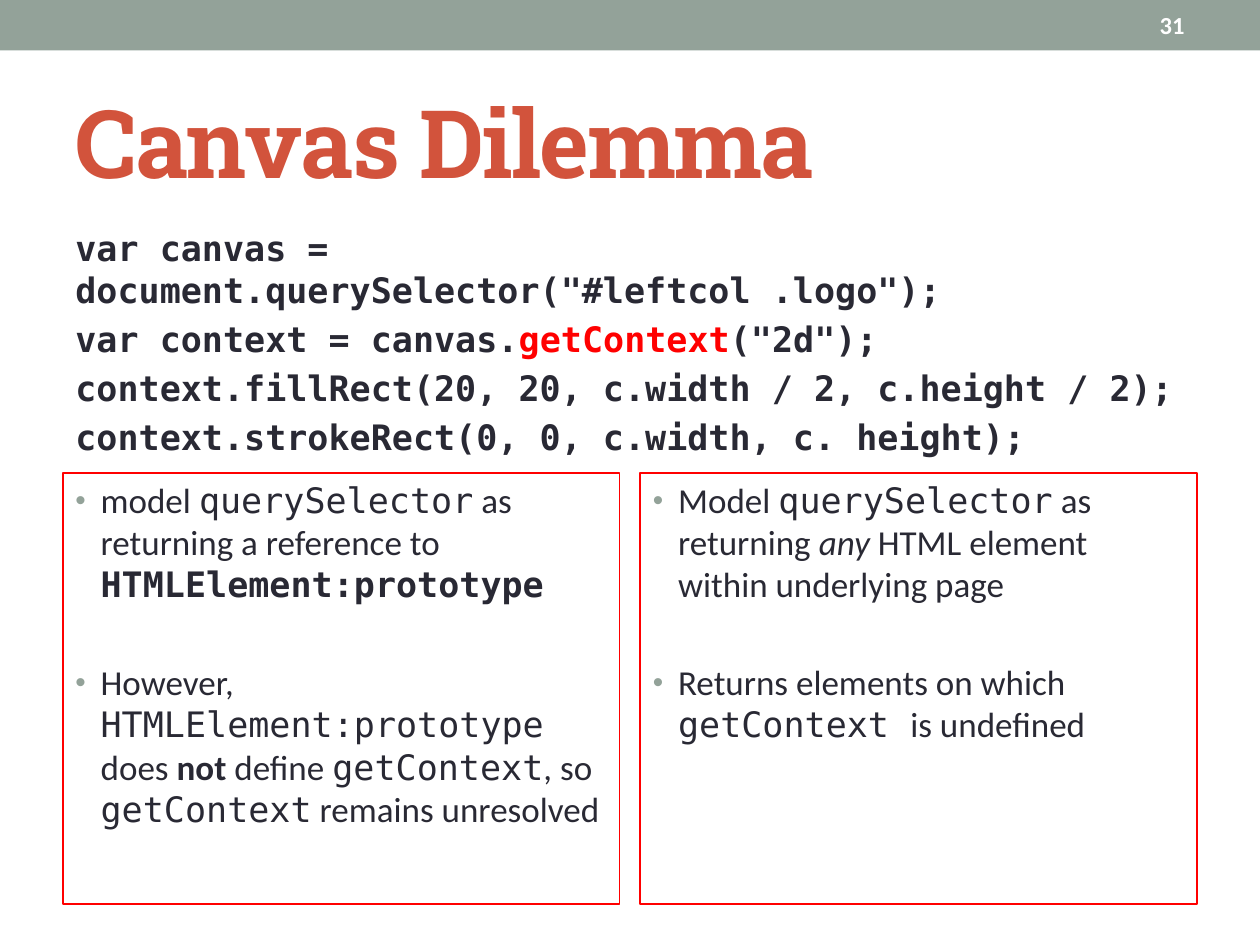
from lxml.etree import SubElement
from pptx import Presentation
from pptx.dml.color import RGBColor
from pptx.enum.shapes import MSO_SHAPE
from pptx.enum.text import MSO_ANCHOR, MSO_AUTO_SIZE, PP_ALIGN
from pptx.oxml.ns import qn
from pptx.util import Cm, Pt

COLORS = {"sage": "93A299", "rust": "D2533C", "ink": "292934", "red": "FF0000", "white": "FFFFFF"}
BODY_FONT, CODE_FONT, TITLE_FONT = "Calibri", "DejaVu Sans Mono", "Roboto Slab"
MARGIN, CONTENT_WIDTH = 1.27, 22.86
CARD_TOP, CARD_WIDTH, CARD_HEIGHT = 9.53, 11.22, 8.69

CODE_LINES = [
    [('var canvas = document.querySelector("#leftcol .logo");', "code bold")],
    [("var context = canvas.", "code bold"), ("getContext", "code bold red"), ('("2d");', "code bold")],
    [("context.fillRect(20, 20, c.width / 2, c.height / 2);", "code bold")],
    [("context.strokeRect(0, 0, c.width, c. height);", "code bold")],
]
CARDS = [
    [
        [("model ", ""), ("querySelector", "code"), (" as returning a reference to ", ""),
         ("HTMLElement:prototype", "code bold")],
        [("However, ", ""), ("HTMLElement:prototype", "code"), (" does ", ""), ("not", "bold"),
         (" deﬁne ", ""), ("getContext", "code"), (", so ", ""), ("getContext", "code"),
         (" remains unresolved", "")],
    ],
    [
        [("Model ", ""), ("querySelector", "code"), (" as returning ", ""), ("any", "italic"),
         (" HTML element within underlying page", "")],
        [("Returns elements on which ", ""), ("getContext ", "code"), ("is undeﬁned", "")],
    ],
]


def rgb(name):
    """Return the named palette colour."""
    return RGBColor.from_string(COLORS[name])


def style_span(span, font, size, color, bold=False, italic=False):
    """Format one run of text."""
    span.font.name = font
    span.font.size = Pt(size)
    span.font.color.rgb = rgb(color)
    span.font.bold = bold
    span.font.italic = italic


def add_box(slide, left, top, width, height):
    """Add a wrapping text box, measured in centimetres."""
    box = slide.shapes.add_textbox(Cm(left), Cm(top), Cm(width), Cm(height))
    box.text_frame.word_wrap = True
    return box


def add_rectangle(slide, left, top, width, height):
    """Add a rectangle without shadow, measured in centimetres."""
    shape = slide.shapes.add_shape(MSO_SHAPE.RECTANGLE, Cm(left), Cm(top), Cm(width), Cm(height))
    shape.shadow.inherit = False
    return shape


def add_bullet(para):
    """Give a paragraph a hanging sage bullet."""
    properties = para._p.get_or_add_pPr()
    properties.set("marL", str(Cm(0.51)))
    properties.set("indent", str(-Cm(0.51)))
    color = SubElement(properties, qn("a:buClr"))
    SubElement(color, qn("a:srgbClr"), val=COLORS["sage"])
    SubElement(properties, qn("a:buSzPct"), val="85000")
    SubElement(properties, qn("a:buFont"), typeface="Arial")
    SubElement(properties, qn("a:buChar"), char="•")


def fill_text(frame, lines, gap=4, bulleted=False):
    """Write styled paragraphs with a gap between them."""
    for index, line in enumerate(lines):
        para = frame.paragraphs[0] if index == 0 else frame.add_paragraph()
        para.alignment = PP_ALIGN.LEFT
        para.space_before = Pt(gap if index else 4)
        if bulleted:
            add_bullet(para)
        for text, style in line:
            span = para.add_run()
            span.text = text
            style_span(span, CODE_FONT if "code" in style else BODY_FONT, 20,
                       "red" if "red" in style else "ink", "bold" in style, "italic" in style)


def add_header(slide, number):
    """Add the top band and the page number."""
    band = add_rectangle(slide, 0, 0, 25.4, 1.02)
    band.fill.solid()
    band.fill.fore_color.rgb = rgb("sage")
    band.line.fill.background()
    box = add_box(slide, 21.16, 0.05, 2.97, 0.91)
    box.text_frame.vertical_anchor = MSO_ANCHOR.MIDDLE
    para = box.text_frame.paragraphs[0]
    para.text = number
    para.alignment = PP_ALIGN.RIGHT
    style_span(para.runs[0], BODY_FONT, 14, "white", bold=True)


def set_title(slide, text):
    """Place and format the title placeholder."""
    title = slide.shapes.title
    title.left, title.top, title.width, title.height = Cm(MARGIN), Cm(1.47), Cm(CONTENT_WIDTH), Cm(2.74)
    frame = title.text_frame
    frame.text = text
    frame.auto_size = MSO_AUTO_SIZE.NONE
    frame.vertical_anchor = MSO_ANCHOR.MIDDLE
    para = frame.paragraphs[0]
    para.alignment = PP_ALIGN.LEFT
    style_span(para.runs[0], TITLE_FONT, 54, "rust", bold=True)
    para.runs[0].font._element.set("spc", "-100")


def add_card(slide, left, lines):
    """Add a red-outlined card of bullets."""
    card = add_rectangle(slide, left, CARD_TOP, CARD_WIDTH, CARD_HEIGHT)
    card.fill.background()
    card.line.color.rgb = rgb("red")
    card.line.width = Pt(1)
    card.text_frame.word_wrap = True
    card.text_frame.vertical_anchor = MSO_ANCHOR.TOP
    fill_text(card.text_frame, lines, gap=32, bulleted=True)


def main():
    """Build and save the slide."""
    deck = Presentation()
    deck.slide_width, deck.slide_height = Cm(25.4), Cm(19.05)
    slide = deck.slides.add_slide(deck.slide_layouts[5])
    add_header(slide, "31")
    set_title(slide, "Canvas Dilemma")
    code = add_box(slide, MARGIN, 4.45, CONTENT_WIDTH, 13.54)
    fill_text(code.text_frame, CODE_LINES)
    for index, lines in enumerate(CARDS):
        add_card(slide, MARGIN + index * (CONTENT_WIDTH - CARD_WIDTH), lines)
    deck.save("out.pptx")


if __name__ == "__main__":
    main()
